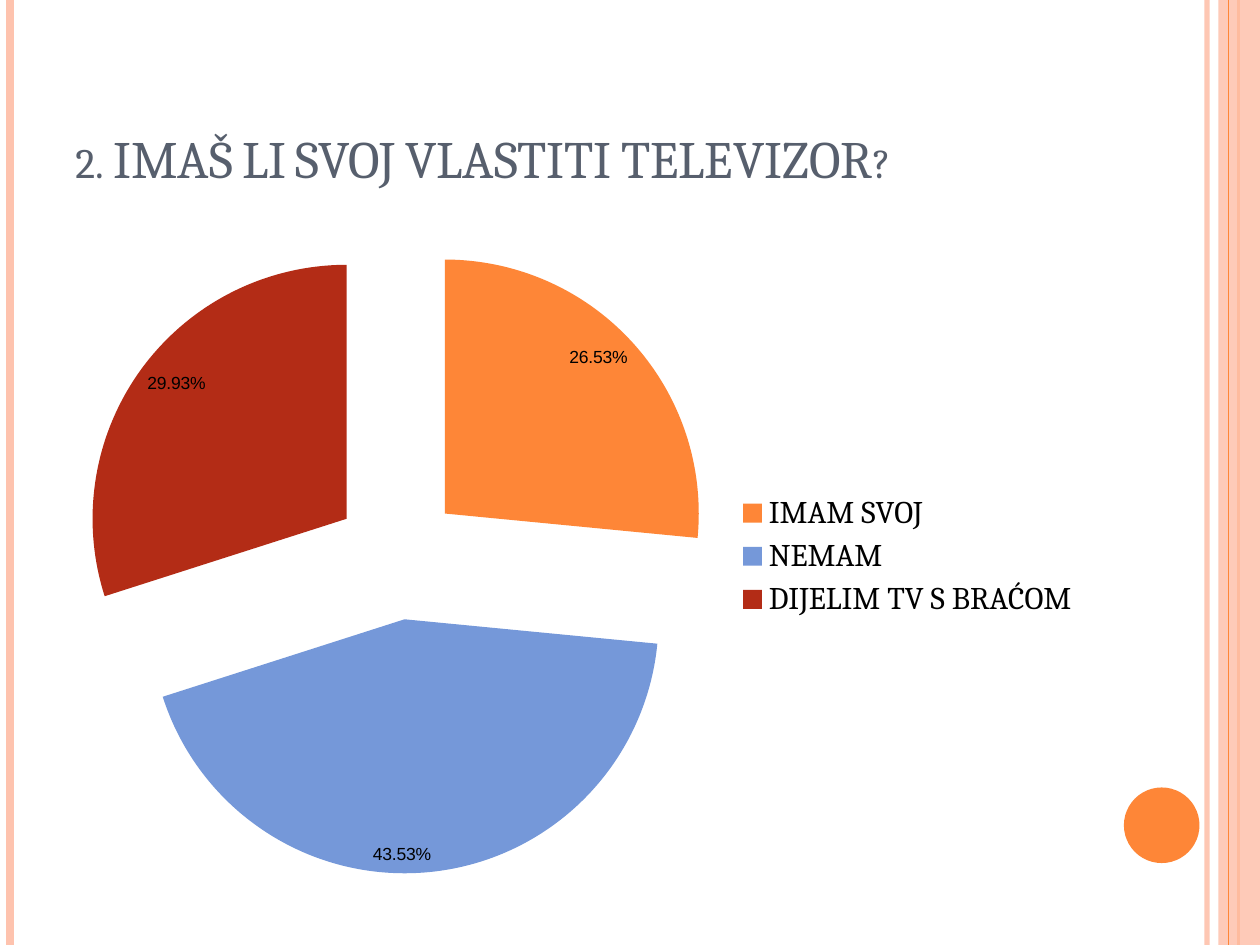
from typing import NamedTuple

from lxml import etree
from pptx import Presentation
from pptx.chart.data import CategoryChartData
from pptx.dml.color import RGBColor
from pptx.enum.chart import XL_CHART_TYPE, XL_LABEL_POSITION, XL_LEGEND_POSITION
from pptx.enum.shapes import MSO_CONNECTOR, MSO_SHAPE
from pptx.enum.text import MSO_ANCHOR
from pptx.oxml.ns import qn
from pptx.util import Inches, Pt

ORANGE = RGBColor(0xFE, 0x86, 0x37)
PEACH = RGBColor(0xFE, 0xC3, 0xAE)
BLUE = RGBColor(0x75, 0x98, 0xD9)
RED = RGBColor(0xB3, 0x2C, 0x16)
SLATE = RGBColor(0x57, 0x5F, 0x6D)
BLACK = RGBColor(0, 0, 0)
FONT = "Cambria"
WIDTH, HEIGHT = 10, 7.5
EXPLOSION = 25


class Stripe(NamedTuple):
    x: float
    color: RGBColor
    weight: float
    opacity: int = 100


class Answer(NamedTuple):
    label: str
    share: float
    color: RGBColor


BACK_STRIPES = [
    Stripe(9.58, PEACH, 3, 93),
    Stripe(0.08, PEACH, 4.5),
    Stripe(9.83, ORANGE, 1.5),
]
FRONT_STRIPE = Stripe(9.75, ORANGE, 0.75)
ANSWERS = [
    Answer("IMAM SVOJ", 0.2653, ORANGE),
    Answer("NEMAM", 0.4353, BLUE),
    Answer("DIJELIM TV S BRAĆOM", 0.2993, RED),
]


def set_opacity(sp, percent: int) -> None:
    for clr in sp._element.spPr.iter(qn("a:srgbClr")):
        etree.SubElement(clr, qn("a:alpha"), val=str(percent * 1000))


def add_stripe(s, stripe: Stripe) -> None:
    x = Inches(stripe.x)
    sp = s.shapes.add_connector(MSO_CONNECTOR.STRAIGHT, x, 0, x, Inches(HEIGHT))
    sp.line.color.rgb = stripe.color
    sp.line.width = Pt(stripe.weight)
    etree.SubElement(sp._element.spPr, qn("a:effectLst"))
    if stripe.opacity < 100:
        set_opacity(sp, stripe.opacity)


def add_filled(s, kind: MSO_SHAPE, x: float, y: float, w: float, h: float,
               color: RGBColor, opacity: int = 100) -> None:
    sp = s.shapes.add_shape(kind, Inches(x), Inches(y), Inches(w), Inches(h))
    sp.shadow.inherit = False
    sp.fill.solid()
    sp.fill.fore_color.rgb = color
    sp.line.fill.background()
    if opacity < 100:
        set_opacity(sp, opacity)


def add_text(s, text: str, x: float, y: float, w: float, h: float, *,
             size: float, color: RGBColor, font: str = FONT,
             anchor: MSO_ANCHOR = MSO_ANCHOR.TOP, small_caps: bool = False) -> None:
    tf = s.shapes.add_textbox(Inches(x), Inches(y), Inches(w), Inches(h)).text_frame
    tf.word_wrap = True
    tf.vertical_anchor = anchor
    r = tf.paragraphs[0].add_run()
    r.text = text
    r.font.size = Pt(size)
    r.font.name = font
    r.font.color.rgb = color
    if small_caps:
        r.font._element.set("cap", "small")


def add_pie(s, answers: list[Answer], x: float, y: float, w: float, h: float) -> None:
    data = CategoryChartData(number_format="0.00%")
    data.categories = [a.label for a in answers]
    data.add_series("Series 1", [a.share for a in answers])
    chart = s.shapes.add_chart(XL_CHART_TYPE.PIE, Inches(x), Inches(y),
                               Inches(w), Inches(h), data).chart
    chart.has_title = False
    chart.font.name = FONT
    chart.font.size = Pt(18)
    chart.font.color.rgb = BLACK
    chart.has_legend = True
    chart.legend.position = XL_LEGEND_POSITION.RIGHT
    chart.legend.include_in_layout = False

    plot = chart.plots[0]
    plot.vary_by_categories = True
    series = plot.series[0]
    for i, answer in enumerate(answers):
        fill = series.points[i].format.fill
        fill.solid()
        fill.fore_color.rgb = answer.color
    for point in series._element.findall(qn("c:dPt")):
        explosion = etree.Element(qn("c:explosion"), val=str(EXPLOSION))
        point.find(qn("c:spPr")).addprevious(explosion)

    labels = series.data_labels
    labels.show_value = True
    labels.number_format = "0.00%"
    labels.number_format_is_linked = False
    labels.position = XL_LABEL_POSITION.INSIDE_END
    labels.font.name = "Arial"
    labels.font.size = Pt(10)
    labels.font.color.rgb = BLACK


def main() -> None:
    prs = Presentation()
    prs.slide_width, prs.slide_height = Inches(WIDTH), Inches(HEIGHT)
    s = prs.slides.add_slide(prs.slide_layouts[6])
    for stripe in BACK_STRIPES:
        add_stripe(s, stripe)
    add_filled(s, MSO_SHAPE.RECTANGLE, 9.67, 0, 0.33, HEIGHT, PEACH, 87)
    add_stripe(s, FRONT_STRIPE)
    add_filled(s, MSO_SHAPE.OVAL, 8.92, 6.25, 0.6, 0.6, ORANGE)
    add_text(s, "2. IMAŠ LI SVOJ VLASTITI TELEVIZOR?", 0.5, 0.3, 8.17, 1.25,
             size=30, color=SLATE, anchor=MSO_ANCHOR.BOTTOM, small_caps=True)
    add_pie(s, ANSWERS, 0.5, 1.75, 8.17, 5.33)
    prs.save("out.pptx")


if __name__ == "__main__":
    main()
